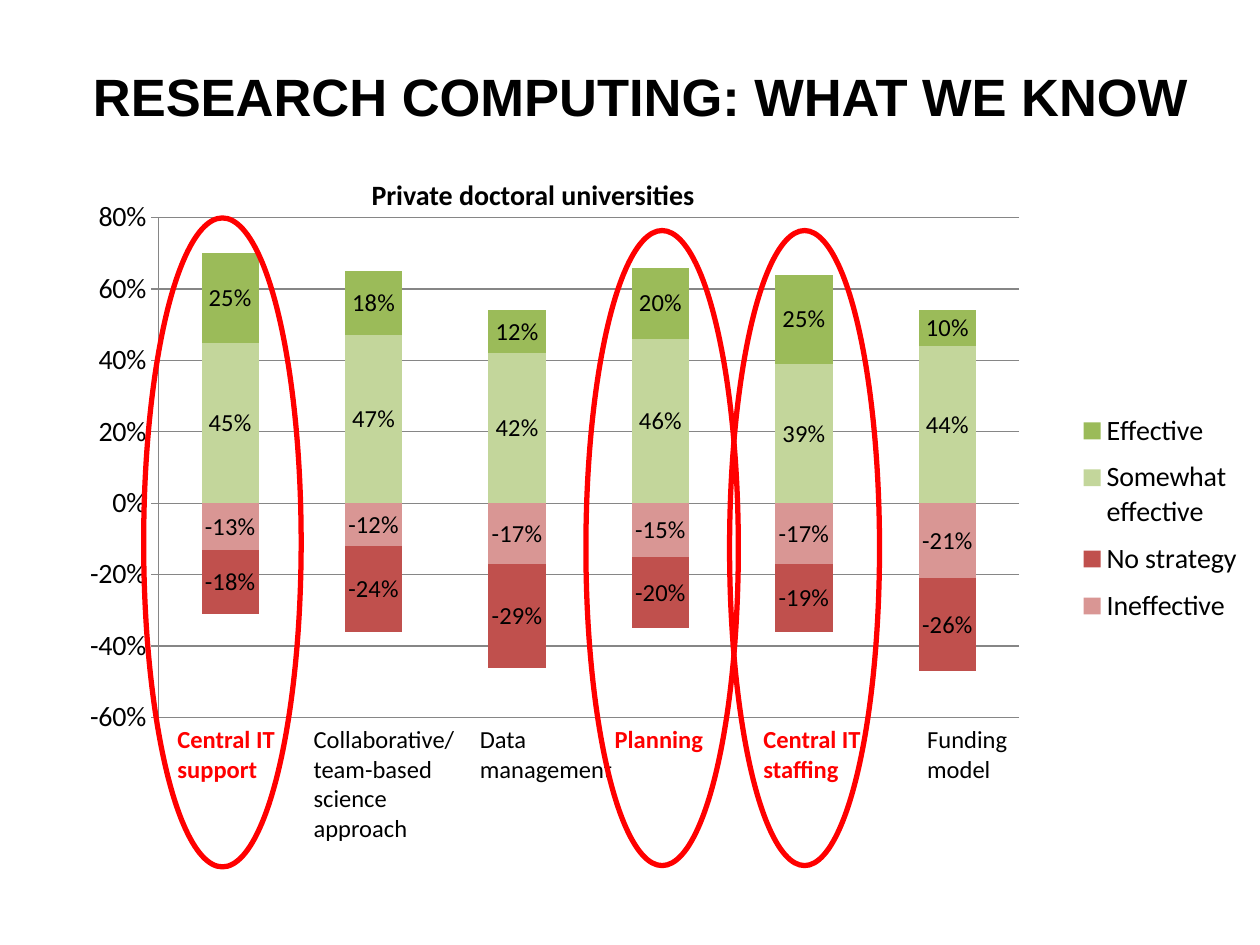
from lxml import etree
from pptx import Presentation
from pptx.chart.data import CategoryChartData
from pptx.dml.color import RGBColor
from pptx.enum.chart import XL_CHART_TYPE, XL_LABEL_POSITION, XL_LEGEND_POSITION, XL_TICK_MARK
from pptx.enum.shapes import MSO_SHAPE
from pptx.enum.text import MSO_ANCHOR, PP_ALIGN
from pptx.oxml.ns import qn
from pptx.util import Inches, Pt

STACKED = XL_CHART_TYPE.COLUMN_STACKED
LABEL_CENTER = XL_LABEL_POSITION.CENTER
LEGEND_RIGHT = XL_LEGEND_POSITION.RIGHT
TICK_OUT = XL_TICK_MARK.OUTSIDE
OVAL = MSO_SHAPE.OVAL
MIDDLE = MSO_ANCHOR.MIDDLE
CENTER = PP_ALIGN.CENTER

BLACK, RED, GRAY = "000000", "FF0000", "868686"
TITLE_ONLY = 5

RATINGS = [
    ("Ineffective", "D99694", (-0.13, -0.12, -0.17, -0.15, -0.17, -0.21)),
    ("No strategy", "C0504D", (-0.18, -0.24, -0.29, -0.20, -0.19, -0.26)),
    ("Somewhat effective", "C3D69B", (0.45, 0.47, 0.42, 0.46, 0.39, 0.44)),
    ("Effective", "9BBB59", (0.25, 0.18, 0.12, 0.20, 0.25, 0.10)),
]
# label, left, width, height, highlighted
AREAS = [
    ("Central IT support", 1.31, 1.08, 0.57, True),
    ("Collaborative/team-based science approach", 2.39, 1.32, 1.04, False),
    ("Data management", 3.71, 1.36, 0.57, False),
    ("Planning", 4.78, 1.08, 0.34, True),
    ("Central IT staffing", 5.96, 1.08, 0.57, True),
    ("Funding model", 7.26, 1.08, 0.57, False),
]
HIGHLIGHTS = [
    (1.14, 1.73, 1.25, 5.15),
    (5.79, 1.83, 1.19, 5.04),
    (4.65, 1.83, 1.21, 5.04),
]


def color(hex_string):
    return RGBColor.from_string(hex_string)


def set_layout(parent, index, x, y, w, h, inner=False):
    """Fix the place of a chart part, as fractions of the chart."""
    for automatic in parent.findall(qn("c:layout")):
        parent.remove(automatic)
    layout = etree.Element(qn("c:layout"))
    manual = etree.SubElement(layout, qn("c:manualLayout"))
    settings = [("layoutTarget", "inner")] if inner else []
    settings += [("xMode", "edge"), ("yMode", "edge"), ("x", x), ("y", y), ("w", w), ("h", h)]
    for tag, value in settings:
        etree.SubElement(manual, qn(f"c:{tag}")).set("val", str(value))
    parent.insert(index, layout)


class SlideBuilder:
    body_font = "Calibri"
    title_font = "Arial"

    def __init__(self, slide):
        self.slide = slide

    def style(self, font, size, hex_string=BLACK, bold=False, name=None):
        font.name = name or self.body_font
        font.size = Pt(size)
        font.bold = bold
        font.color.rgb = color(hex_string)

    def title(self, wording, left, top, width, height):
        title = self.slide.shapes.title
        title.left, title.top = Inches(left), Inches(top)
        title.width, title.height = Inches(width), Inches(height)
        frame = title.text_frame
        frame.text = wording
        frame.vertical_anchor = MIDDLE
        frame.paragraphs[0].alignment = CENTER
        self.style(frame.paragraphs[0].runs[0].font, 30, bold=True, name=self.title_font)

    def label(self, wording, left, top, width, height, size, hex_string=BLACK, bold=False):
        box = self.slide.shapes.add_textbox(
            Inches(left), Inches(top), Inches(width), Inches(height))
        frame = box.text_frame
        frame.word_wrap = True
        frame.text = wording
        self.style(frame.paragraphs[0].runs[0].font, size, hex_string, bold)

    def ring(self, left, top, width, height):
        ring = self.slide.shapes.add_shape(
            OVAL, Inches(left), Inches(top), Inches(width), Inches(height))
        ring.shadow.inherit = False
        ring.fill.background()
        ring.line.color.rgb = color(RED)
        ring.line.width = Pt(3)

    def ratings_chart(self, left, top, width, height):
        data = CategoryChartData(number_format="0%")
        data.categories = [str(n) for n in range(1, len(AREAS) + 1)]
        for name, _, shares in RATINGS:
            data.add_series(name, shares)
        chart = self.slide.shapes.add_chart(
            STACKED, Inches(left), Inches(top), Inches(width), Inches(height), data).chart
        self.style(chart.font, 18)
        chart.has_title = False

        plot = chart.plots[0]
        plot.gap_width, plot.overlap = 150, 100
        plot.vary_by_categories = False
        for series, (_, fill, _) in zip(plot.series, RATINGS):
            series.invert_if_negative = False
            series.format.fill.solid()
            series.format.fill.fore_color.rgb = color(fill)
            labels = series.data_labels
            labels.show_value = True
            labels.position = LABEL_CENTER
            labels.number_format, labels.number_format_is_linked = "0%", False
            self.style(labels.font, 14)

        chart.category_axis.visible = False
        axis = chart.value_axis
        axis.minimum_scale, axis.maximum_scale, axis.major_unit = -0.6, 0.8, 0.2
        axis.major_tick_mark = TICK_OUT
        axis.tick_labels.number_format = "0%"
        axis.tick_labels.number_format_is_linked = False
        self.style(axis.tick_labels.font, 16)
        axis.has_major_gridlines = True
        for line in (axis.format.line, axis.major_gridlines.format.line):
            line.color.rgb = color(GRAY)
            line.width = Pt(0.75)

        chart.has_legend = True
        legend = chart.legend
        legend.position = LEGEND_RIGHT
        legend.include_in_layout = False
        self.style(legend.font, 16)
        plot_area = chart._chartSpace.chart.plotArea
        set_layout(plot_area, 0, 0.117, 0.042, 0.69, 0.894, inner=True)
        legend_xml = legend._element
        overlay = legend_xml.find(qn("c:overlay"))
        set_layout(legend_xml, legend_xml.index(overlay), 0.84, 0.37, 0.16, 0.42)
        if legend_xml.index(overlay) < legend_xml.index(legend_xml.find(qn("c:layout"))):
            legend_xml.append(overlay)


def main():
    deck = Presentation()
    deck.slide_width, deck.slide_height = Inches(10), Inches(7.5)
    builder = SlideBuilder(deck.slides.add_slide(deck.slide_layouts[TITLE_ONLY]))

    builder.title("RESEARCH COMPUTING: WHAT WE KNOW", 0.5, 0.13, 9.17, 1.25)
    builder.ratings_chart(0.1, 1.54, 9.9, 4.44)
    for wording, left, width, height, highlighted in AREAS:
        builder.label(wording, left, 5.7, width, height, 14,
                      RED if highlighted else BLACK, highlighted)
    builder.label("Private doctoral universities", 2.85, 1.36, 3.21, 0.37, 16, bold=True)
    for place in HIGHLIGHTS:
        builder.ring(*place)

    deck.save("out.pptx")


if __name__ == "__main__":
    main()
